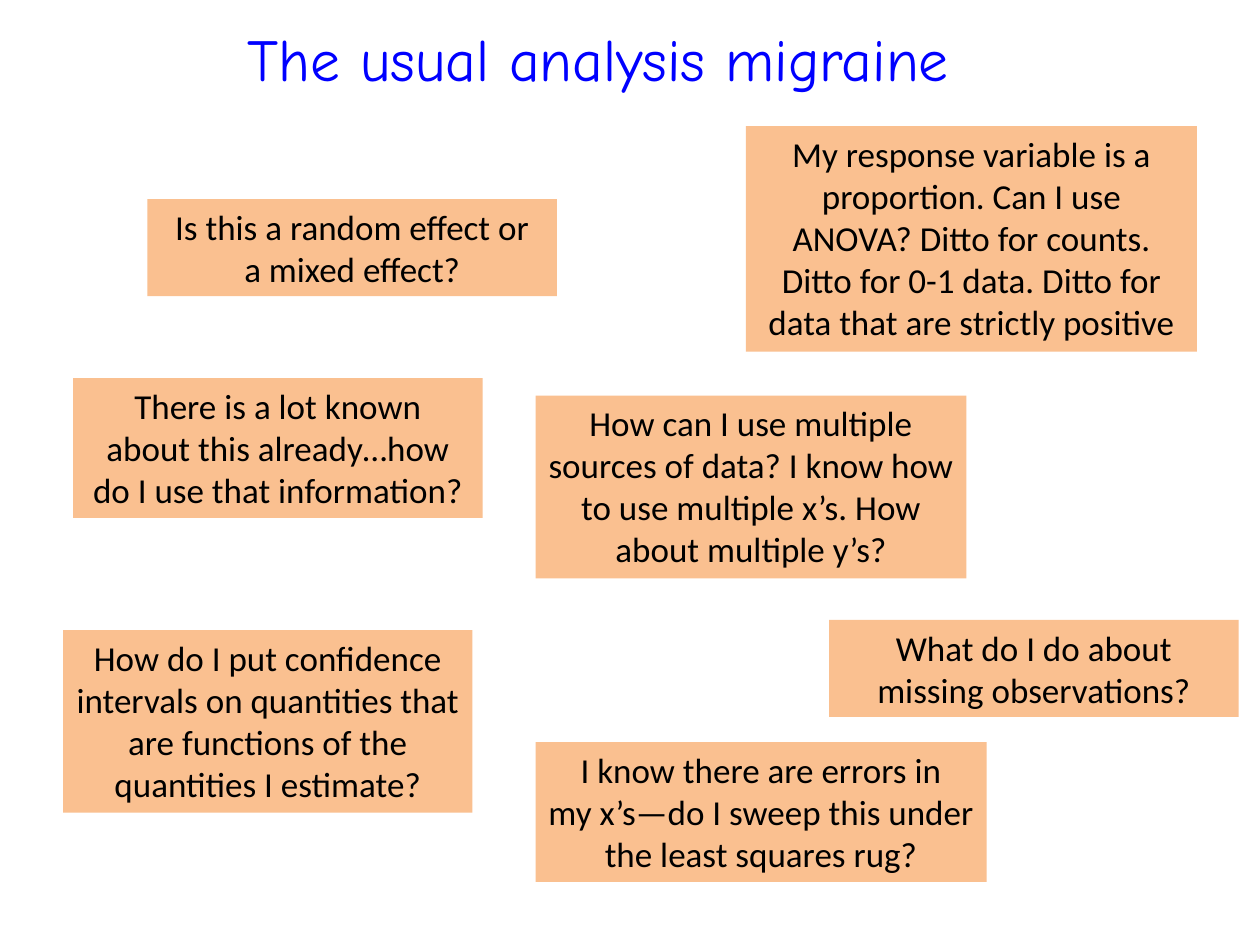
from pptx import Presentation
from pptx.dml.color import RGBColor
from pptx.enum.shapes import MSO_SHAPE as Shape
from pptx.enum.text import MSO_ANCHOR as Anchor, MSO_AUTO_SIZE as Fit, PP_ALIGN as Align
from pptx.util import Inches, Pt

# left, top, width, number of lines, text
QUESTIONS = [
    (1.17, 1.58, 3.25, 2, "Is this a random effect or\na mixed effect?"),
    (0.58, 3, 3.25, 3,
     "There is a lot known\nabout this already…how do I use that information?"),
    (0.5, 5, 3.25, 4,
     "How do I put confidence intervals on quantities that are functions "
     "of the quantities I estimate?"),
    (4.25, 5.89, 3.58, 3,
     "I know there are errors in\n"
     "my x’s—do I sweep this under the least squares rug?"),
    (4.25, 3.14, 3.42, 4,
     "How can I use multiple sources of data? I know how to use multiple x’s. "
     "How about multiple y’s?"),
    (5.92, 1, 3.58, 5,
     "My response variable is a proportion. Can I use ANOVA? Ditto for counts. "
     "Ditto for 0-1 data. Ditto for data that are strictly positive"),
    (6.58, 4.92, 3.25, 2, "What do I do about\nmissing observations?"),
]


def color(code):
    return RGBColor.from_string(code)


class Page:
    BLUE, PEACH, BLACK = "0000FF", "FAC090", "000000"
    LINE, PAD = 0.34, 0.09  # height of one text line, and the rest of a box

    def __init__(self, slide):
        self.slide = slide

    def set_text(self, frame, text, font, size, ink):
        frame.text = text
        frame.word_wrap = True
        for para in frame.paragraphs:
            para.alignment = Align.CENTER
            para.font.name = font
            para.font.size = Pt(size)
            para.font.color.rgb = color(ink)

    def title(self, text, left, top, width, height):
        title = self.slide.shapes.title
        title.left, title.top = Inches(left), Inches(top)
        title.width, title.height = Inches(width), Inches(height)
        frame = title.text_frame
        self.set_text(frame, text, "Comic Neue", 34, self.BLUE)
        frame.auto_size = Fit.NONE
        frame.vertical_anchor = Anchor.MIDDLE

    def box(self, left, top, width, lines, text):
        height = self.PAD + self.LINE * lines
        box = self.slide.shapes.add_shape(
            Shape.RECTANGLE, Inches(left), Inches(top), Inches(width), Inches(height))
        box.shadow.inherit = False
        box.fill.solid()
        box.fill.fore_color.rgb = color(self.PEACH)
        box.line.fill.background()
        frame = box.text_frame
        self.set_text(frame, text, "Calibri", 20, self.BLACK)
        frame.auto_size = Fit.SHAPE_TO_FIT_TEXT
        frame.vertical_anchor = Anchor.TOP


def main():
    deck = Presentation()
    deck.slide_width, deck.slide_height = Inches(10), Inches(7.5)
    page = Page(deck.slides.add_slide(deck.slide_layouts[5]))
    page.title("The usual analysis migraine", 0.25, -0.17, 9, 1.25)
    for question in QUESTIONS:
        page.box(*question)
    deck.save("out.pptx")


if __name__ == "__main__":
    main()
